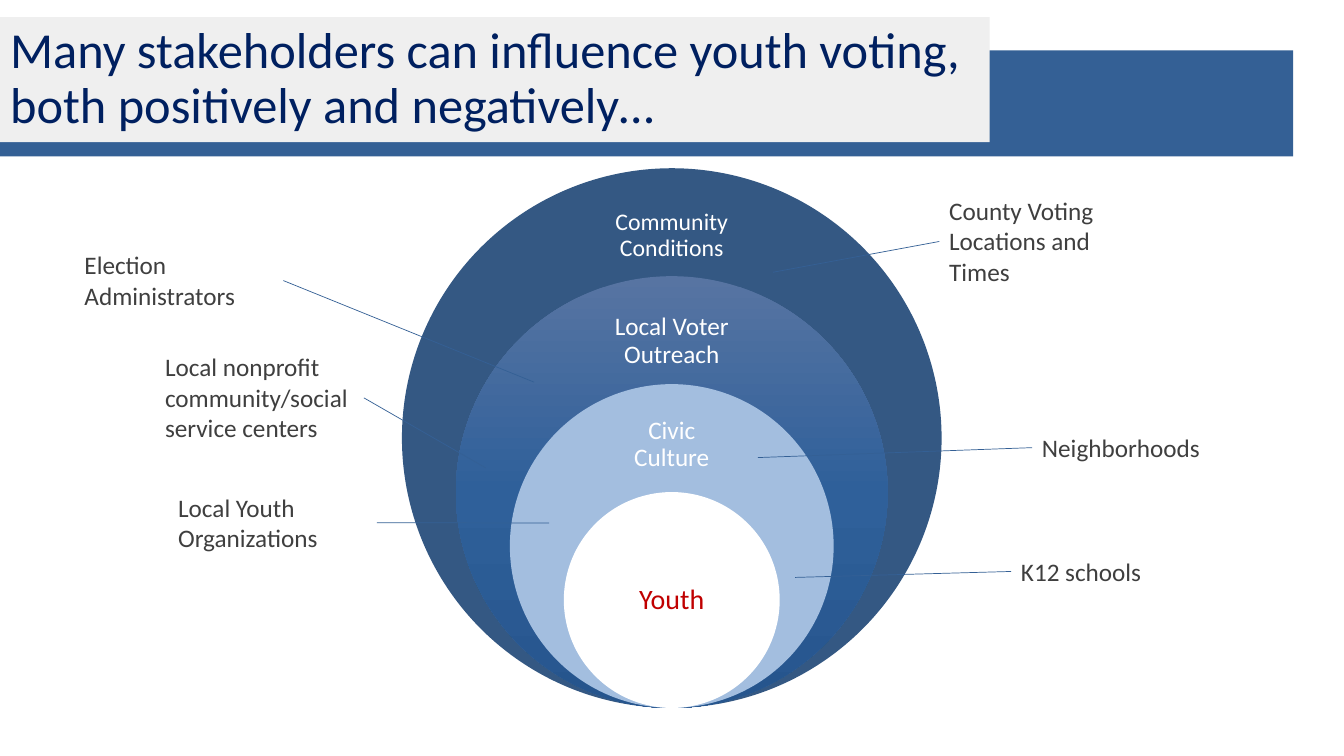
import copy
import pptx
import pptx.util
import pptx.dml.color
import pptx.enum.shapes
import pptx.enum.text
import pptx.oxml.ns
from lxml import etree

Cm = pptx.util.Cm
Pt = pptx.util.Pt
ALIGN = pptx.enum.text.PP_ALIGN
ANCHOR = pptx.enum.text.MSO_ANCHOR
FIT = pptx.enum.text.MSO_AUTO_SIZE
SHAPE = pptx.enum.shapes.MSO_SHAPE

# Content
TITLE = "Many stakeholders can influence youth voting, both positively and negatively…"
COLORS = {
    "band": "346095", "panel": "EFEFEF", "title": "002060", "label": "3F3F3F",
    "outer": "345883", "inner": "A3BEDF", "white": "FFFFFF", "youth": "C00000",
    "top": "5774A2", "middle": "2F609A", "bottom": "26558D",
}
# caption, fills from top to bottom, text colour, size, caption top, height, inset
RINGS = [
    ("Community Conditions", ["outer"], "white", 17, 4.93, 2.03, 0.33),
    ("Local Voter Outreach", ["top", "middle", "bottom"], "white", 18, 7.62, 1.96, 0.36),
    ("Civic Culture", ["inner"], "white", 18, 10.29, 1.83, 0.36),
    ("Youth", ["white"], "youth", 20, 13.77, 2.72, 0.41),
]
# text, left, top, height, end of the pointer
LABELS = [
    ("Election Administrators", 1.88, 6.17, 1.8, (13.46, 9.63)),
    ("Neighborhoods", 26.01, 10.77, 1.02, (19.1, 11.53)),
    ("County Voting Locations and Times", 23.67, 4.8, 2.57, (19.48, 6.86)),
    ("Local nonprofit community/social service centers", 3.91, 8.74, 2.57, (12.24, 11.79)),
    ("Local Youth Organizations", 4.24, 12.27, 1.8, (13.84, 13.18)),
    ("K12 schools", 25.48, 13.89, 1.02, (20.04, 14.55)),
]
CENTER, RING_BOTTOM, RING_SIZE = 16.93, 17.84, 13.6
CAPTION_WIDTH, LABEL_WIDTH = 3.82, 5.26


def rgb(name):
    return pptx.dml.color.RGBColor.from_string(COLORS[name])


def apply(target, values):
    for name, value in values.items():
        setattr(target, name, value)


def paint(shape, names):
    shape.shadow.inherit = False
    shape.line.fill.background()
    if len(names) == 1:
        shape.fill.solid()
        shape.fill.fore_color.rgb = rgb(names[0])
        return
    shape.fill.gradient()
    shape.fill.gradient_angle = 270
    stop_list = shape._element.spPr.find(".//" + pptx.oxml.ns.qn("a:gsLst"))
    while len(stop_list) < len(names):
        stop_list.append(copy.deepcopy(stop_list[-1]))
    for index, (stop, name) in enumerate(zip(shape.fill.gradient_stops, names)):
        stop.position = index / (len(names) - 1)
        stop.color.rgb = rgb(name)


def write(box, text, size, color, frame_format, para_format):
    frame = box.text_frame
    frame.text = text
    apply(frame, {"word_wrap": True, **frame_format})
    para = frame.paragraphs[0]
    apply(para, para_format)
    apply(para.font, {"name": "Calibri", "size": Pt(size)})
    para.font.color.rgb = rgb(color)


deck = pptx.Presentation()
deck.slide_width, deck.slide_height = Cm(33.87), Cm(19.05)
page = deck.slides.add_slide(deck.slide_layouts[5])
shapes = page.shapes

# Title over its band
title = shapes.title
apply(title, {"left": 0, "top": Cm(0.43), "width": Cm(24.94), "height": Cm(3.15)})
title.fill.solid()
title.fill.fore_color.rgb = rgb("panel")
write(title, TITLE, 36, "title",
      {"vertical_anchor": ANCHOR.MIDDLE, "auto_size": FIT.NONE},
      {"alignment": ALIGN.LEFT, "line_spacing": 0.9})
band = shapes.add_shape(SHAPE.RECTANGLE, 0, Cm(1.27), Cm(32.59), Cm(2.67))
paint(band, ["band"])
title._element.addprevious(band._element)

# Nested rings resting on one point, each a fifth smaller than the outer one
for level, (text, fills, color, size, top, height, inset) in enumerate(RINGS):
    diameter = RING_SIZE * (1 - 0.2 * level)
    ring = shapes.add_shape(SHAPE.OVAL, Cm(CENTER - diameter / 2), Cm(RING_BOTTOM - diameter),
                            Cm(diameter), Cm(diameter))
    paint(ring, fills)
    caption = shapes.add_textbox(Cm(CENTER - CAPTION_WIDTH / 2), Cm(top),
                                 Cm(CAPTION_WIDTH), Cm(height))
    margins = {"margin_" + side: Cm(inset) for side in ("left", "top", "right", "bottom")}
    write(caption, text, size, color, {"vertical_anchor": ANCHOR.MIDDLE, **margins},
          {"alignment": ALIGN.CENTER, "line_spacing": 0.9})

# Stakeholder labels with pointers into the rings
for text, left, top, height, (end_x, end_y) in LABELS:
    label = shapes.add_textbox(Cm(left), Cm(top), Cm(LABEL_WIDTH), Cm(height))
    write(label, text, 18, "label", {"auto_size": FIT.SHAPE_TO_FIT_TEXT}, {})
    pointer = shapes.add_connector(pptx.enum.shapes.MSO_CONNECTOR.STRAIGHT,
                                   Cm(left), Cm(top), Cm(end_x), Cm(end_y))
    pointer.begin_connect(label, 3 if left < CENTER else 1)
    pointer.line.width = Pt(0.5)
    pointer.line.color.rgb = rgb("band")
    etree.SubElement(pointer._element.spPr, pptx.oxml.ns.qn("a:effectLst"))

deck.save("out.pptx")
